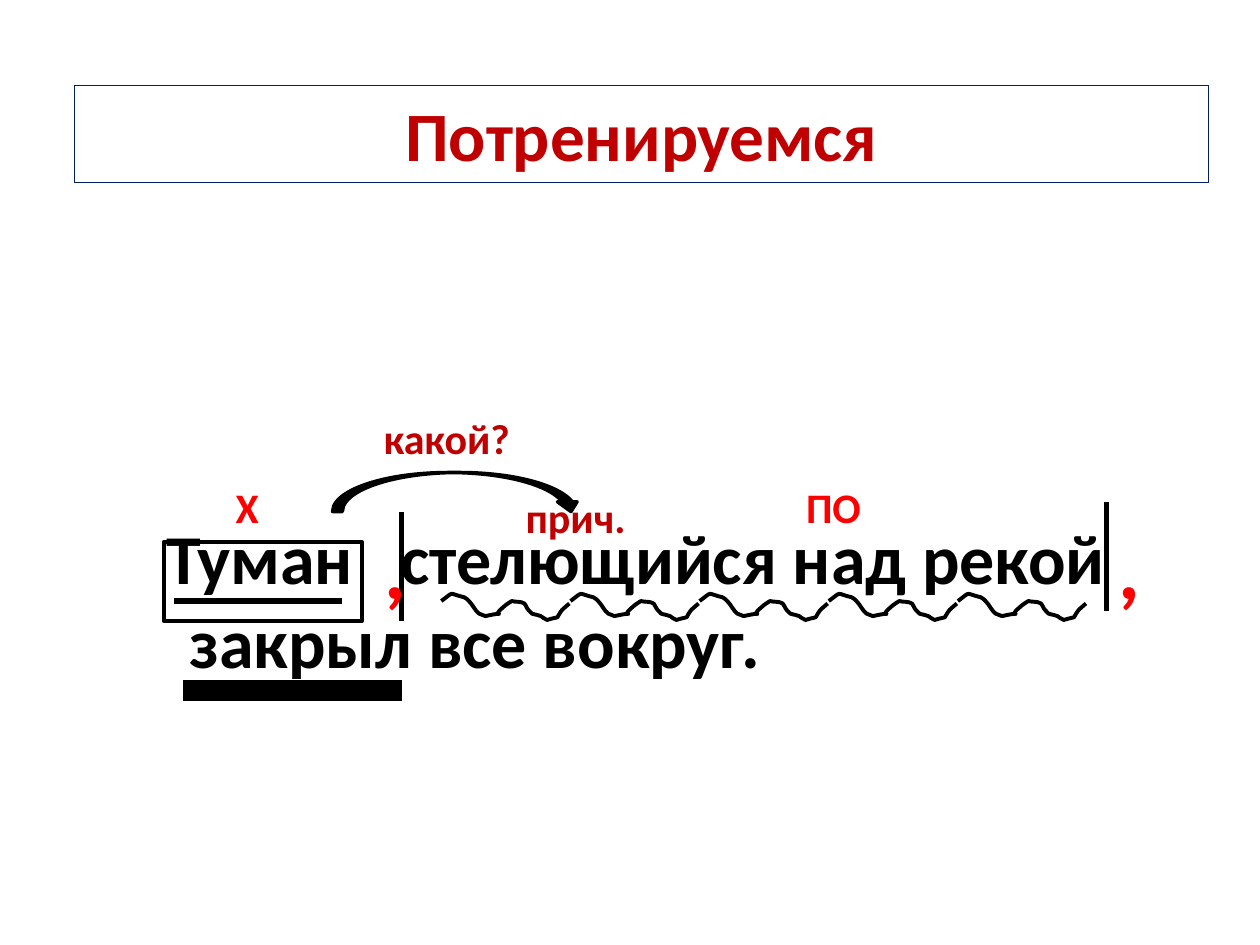
from pptx import Presentation
from pptx.dml.color import RGBColor as Rgb
from pptx.enum.shapes import MSO_CONNECTOR as Link, MSO_SHAPE as Form
from pptx.enum.text import MSO_ANCHOR as Anchor, PP_ALIGN as Align
from pptx.oxml.ns import qn
from pptx.util import Pt
from lxml.etree import SubElement

COLORS = {"ink": "000000", "frame": "002060", "title": "C00000", "mark": "FF0000"}
WAVE_START = (0, 5.8)
WAVE_SIZE = (73.2, 16.6)
WAVE_CURVES = [
    ((7.9, 0), (3.6, 1.4), (13, 3.6)),
    ((14.4, 4.3), (15.1, 5), (15.8, 5.8)),
    ((18, 7.9), (19.4, 11.5), (21.6, 13)),
    ((25.2, 14.4),),
    ((41, 10.8), (26.6, 16.6), (35.3, 9.4)),
    ((36.7, 7.9), (40.3, 5.8), (40.3, 5.8)),
    ((42.5, 6.5), (45.4, 5.8), (47.5, 7.2)),
    ((48.2, 7.9), (49, 10.1), (49.7, 10.8)),
    ((50.4, 12.2), (51.1, 12.2), (51.8, 13)),
    ((54, 13.7), (55.4, 13.7), (56.9, 14.4)),
    ((57.6, 15.1), (59, 15.8), (60.5, 16.6)),
    ((69.8, 13.7), (64.1, 17.3), (69.1, 10.8)),
    ((70.6, 9.4), (73.2, 7.2), (73.2, 7.2)),
]
WAVE_COUNT, WAVE_PITCH = 5, 73.8


def rgb(name):
    return Rgb.from_string(COLORS[name])


def set_all(target, values):
    for name, value in values.items():
        setattr(target, name, value)


def inside(box, left, top, width, height):
    return box[0] + left, box[1] + top, width, height


def add_span(para, text, size, color):
    span = para.add_run()
    span.text = text
    set_all(span.font, {"name": "Calibri", "size": Pt(size), "bold": True})
    span.font.color.rgb = rgb(color)
    return span


def add_text_box(page, box, anchor=Anchor.MIDDLE):
    shape = page.shapes.add_textbox(*map(Pt, box))
    set_all(shape.text_frame, {"word_wrap": True, "vertical_anchor": anchor})
    return shape


def add_label(page, box, text, size, color):
    shape = add_text_box(page, box)
    para = shape.text_frame.paragraphs[0]
    para.alignment = Align.CENTER
    add_span(para, text, size, color)
    return shape


def set_line(shape, width, color="ink"):
    shape.line.color.rgb = rgb(color)
    shape.line.width = Pt(width)


def add_rule(page, box, start, end, width):
    points = (box[0] + start[0], box[1] + start[1], box[0] + end[0], box[1] + end[1])
    rule = page.shapes.add_connector(Link.STRAIGHT, *map(Pt, points))
    set_line(rule, width)
    SubElement(rule._element.spPr, qn("a:effectLst"))


def add_form(page, box, form, filled):
    shape = page.shapes.add_shape(form, *map(Pt, box))
    shape.shadow.inherit = False
    set_line(shape, 2)
    if filled:
        shape.fill.solid()
        shape.fill.fore_color.rgb = rgb("ink")
    else:
        shape.fill.background()


def add_step(outline, tag, points):
    step = SubElement(outline, qn(tag))
    for x, y in points:
        SubElement(step, qn("a:pt"), x=str(Pt(x)), y=str(Pt(y)))


def add_wave(page, left, top):
    builder = page.shapes.build_freeform(Pt(left), Pt(top))
    corner = (Pt(left) + Pt(WAVE_SIZE[0]), Pt(top) + Pt(WAVE_SIZE[1]))
    builder.add_line_segments([corner], close=False)
    wave = builder.convert_to_shape()
    wave.shadow.inherit = False
    wave.fill.background()
    set_line(wave, 2.25)
    outline = next(wave._element.iter(qn("a:path")))
    for step in list(outline):
        outline.remove(step)
    add_step(outline, "a:moveTo", [WAVE_START])
    for curve in WAVE_CURVES:
        add_step(outline, "a:lnTo" if len(curve) == 1 else "a:cubicBezTo", curve)


def draw_title(page, box):
    shape = add_label(page, box, "Потренируемся", 39.6, "title")
    set_line(shape, 0.75, "frame")


def draw_sentence(page, box):
    frame = add_text_box(page, box, Anchor.TOP).text_frame
    frame.margin_top = Pt(171.6)
    para = frame.paragraphs[0]
    layout = para._p.get_or_add_pPr()
    layout.set("marL", str(Pt(58.7)))
    layout.set("indent", str(Pt(-13.3)))
    add_span(para, "Туман", 40, "ink")
    gap = add_span(para, " ", 40, "ink")
    gap._r.get_or_add_rPr().set("spc", "1800")
    add_span(para, "стелющийся над рекой закрыл все вокруг.", 40, "ink")


def draw_analysis(page, box):
    rules = [
        ((62.2, 272.2), (187.2, 272.2), 11.75),
        ((56.9, 221), (153, 221), 3),
        ((589.7, 164.6), (589.7, 226.6), 3),
        ((187, 170.2), (187, 232.6), 3),
    ]
    labels = [
        ("Х", (85, 147.6, 22.3, 39.6), 24, "mark"),
        ("прич.", (232.4, 158.8, 108, 28.1), 24, "title"),
        ("ПО", (408.2, 147.6, 51.1, 39.6), 24, "mark"),
        (",", (589.7, 181.4, 17.3, 39.6), 48, "mark"),
        (",", (169.9, 181.4, 17.3, 39.6), 48, "mark"),
        ("какой?", (158.8, 113.8, 108, 28.1), 24, "title"),
    ]
    for start, end, width in rules:
        add_rule(page, box, start, end, width)
    add_form(page, inside(box, 51.1, 187.2, 113.2, 45.4), Form.RECTANGLE, False)
    for text, place, size, color in labels:
        add_label(page, inside(box, *place), text, size, color)
    for index in range(WAVE_COUNT):
        add_wave(page, box[0] + 209.7 + index * WAVE_PITCH, box[1] + 215.3)
    add_form(page, inside(box, 147.6, 147.6, 141.8, 22.3), Form.CURVED_DOWN_ARROW, True)


def main():
    deck = Presentation()
    set_all(deck, {"slide_width": Pt(720), "slide_height": Pt(540)})
    page = deck.slides.add_slide(deck.slide_layouts[6])
    content = (42.5, 122.4, 648, 356.4)
    draw_title(page, (42.5, 49, 648, 55.4))
    draw_sentence(page, content)
    draw_analysis(page, content)
    deck.save("out.pptx")


if __name__ == "__main__":
    main()
